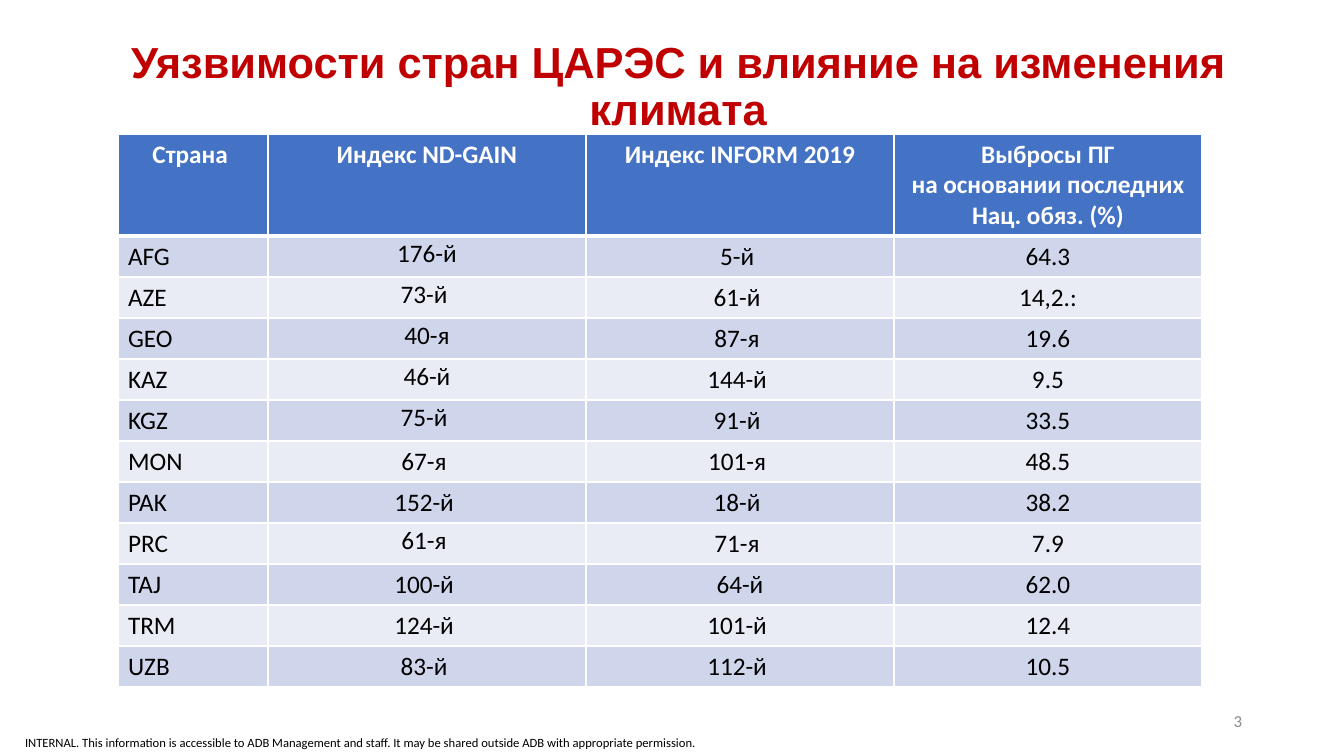
from lxml.etree import SubElement
from pptx import Presentation
from pptx.dml.color import RGBColor
from pptx.enum.text import MSO_ANCHOR, PP_ALIGN
from pptx.oxml.ns import qn
from pptx.util import Pt

TITLE = "Уязвимости стран ЦАРЭС и влияние на изменения климата"
NOTICE = ("INTERNAL. This information is accessible to ADB Management and staff. "
          "It may be shared outside ADB with appropriate permission.")
PAGE_NUMBER = "3"
HEADINGS = ("Страна ", "Индекс ND-GAIN", "Индекс INFORM 2019",
            "Выбросы ПГ\nна основании последних Нац. обяз. (%)")
COUNTRIES = [
    ("AFG", "176-й", "5-й ", "64.3"),
    ("AZE", "73-й ", "61-й ", "14,2.:"),
    ("GEO", "40-я", "87-я ", "19.6"),
    ("KAZ", "46-й", "144-й ", "9.5"),
    ("KGZ", "75-й ", "91-й ", "33.5"),
    ("MON", "67-я ", "101-я ", "48.5"),
    ("PAK", "152-й ", "18-й ", "38.2"),
    ("PRC", "61-я ", "71-я ", "7.9"),
    ("TAJ", "100-й ", "64-й", "62.0"),
    ("TRM", "124-й ", "101-й ", "12.4"),
    ("UZB", "83-й ", "112-й ", "10.5"),
]
TIGHT_GAIN = {"AFG", "AZE", "GEO", "KAZ", "KGZ", "PRC"}

RED = RGBColor(0xC0, 0x00, 0x00)
BLACK = RGBColor(0x00, 0x00, 0x00)
WHITE = RGBColor(0xFF, 0xFF, 0xFF)
GRAY = RGBColor(0x8C, 0x8C, 0x8C)
BLUE = RGBColor(0x44, 0x72, 0xC4)
BANDS = (RGBColor(0xCF, 0xD5, 0xEA), RGBColor(0xE9, 0xEB, 0xF5))

COLUMN_WIDTHS = (150, 318, 308, 308)
HEADER_HEIGHT, ROW_HEIGHT = 102, 41
TABLE_LEFT, TABLE_TOP = 118, 134


def px(length):
    return round(length * 914400 / 100.8)


def write(frame, text, size, color, align, font="Calibri", bold=False, spacing=None):
    for index, line in enumerate(text.split("\n")):
        paragraph = frame.add_paragraph() if index else frame.paragraphs[0]
        paragraph.alignment = align
        if spacing:
            paragraph.line_spacing = spacing
        run = paragraph.add_run()
        run.text = line
        run.font.name, run.font.size, run.font.bold = font, Pt(size), bold
        run.font.color.rgb = color


def add_label(slide, box, text, size, color, align, **style):
    frame = slide.shapes.add_textbox(*map(px, box)).text_frame
    frame.word_wrap = True
    frame.vertical_anchor = MSO_ANCHOR.MIDDLE
    write(frame, text, size, color, align, **style)
    return frame


def paint_cell(cell, fill, top, bottom):
    """Give the cell white borders, with top and bottom in points, and a fill."""
    properties = cell._tc.get_or_add_tcPr()
    for side, width in (("L", 1), ("R", 1), ("T", top), ("B", bottom)):
        border = SubElement(properties, qn(f"a:ln{side}"), w=str(Pt(width)))
        solid = SubElement(border, qn("a:solidFill"))
        SubElement(solid, qn("a:srgbClr"), val=str(WHITE))
    cell.fill.solid()
    cell.fill.fore_color.rgb = fill


def add_country_table(slide):
    rows = [HEADINGS, *COUNTRIES]
    heights = [HEADER_HEIGHT] + [ROW_HEIGHT] * len(COUNTRIES)
    table = slide.shapes.add_table(
        len(rows), len(COLUMN_WIDTHS), px(TABLE_LEFT), px(TABLE_TOP),
        px(sum(COLUMN_WIDTHS)), px(sum(heights))).table
    for column, width in zip(table.columns, COLUMN_WIDTHS):
        column.width = px(width)
    for r, (values, height) in enumerate(zip(rows, heights)):
        table.rows[r].height = px(height)
        header = r == 0
        for c, value in enumerate(values):
            cell = table.cell(r, c)
            paint_cell(cell, BLUE if header else BANDS[(r - 1) % 2],
                       3 if r == 1 else 1, 3 if header else 1)
            tight = c == 1 and values[0] in TIGHT_GAIN
            if tight:
                cell.margin_left = cell.margin_right = px(7)
                cell.margin_top = cell.margin_bottom = 0
            align = PP_ALIGN.CENTER if header or c else PP_ALIGN.LEFT
            write(cell.text_frame, value, 18, WHITE if header else BLACK, align,
                  bold=header, spacing=1.07 if tight else None)


def main():
    deck = Presentation()
    deck.slide_width, deck.slide_height = px(1344), px(756)
    slide = deck.slides.add_slide(deck.slide_layouts[6])
    notice = add_label(slide, (0, 729, 720, 27), NOTICE, 9, BLACK, PP_ALIGN.LEFT)
    notice.margin_left = px(25)
    notice.margin_top = notice.margin_right = notice.margin_bottom = 0
    add_label(slide, (104, 42, 1148, 92), TITLE, 31, RED, PP_ALIGN.CENTER,
              font="Arial", bold=True, spacing=0.9)
    add_label(slide, (950, 701, 302, 40), PAGE_NUMBER, 12, GRAY, PP_ALIGN.RIGHT)
    add_country_table(slide)
    deck.save("out.pptx")


if __name__ == "__main__":
    main()
